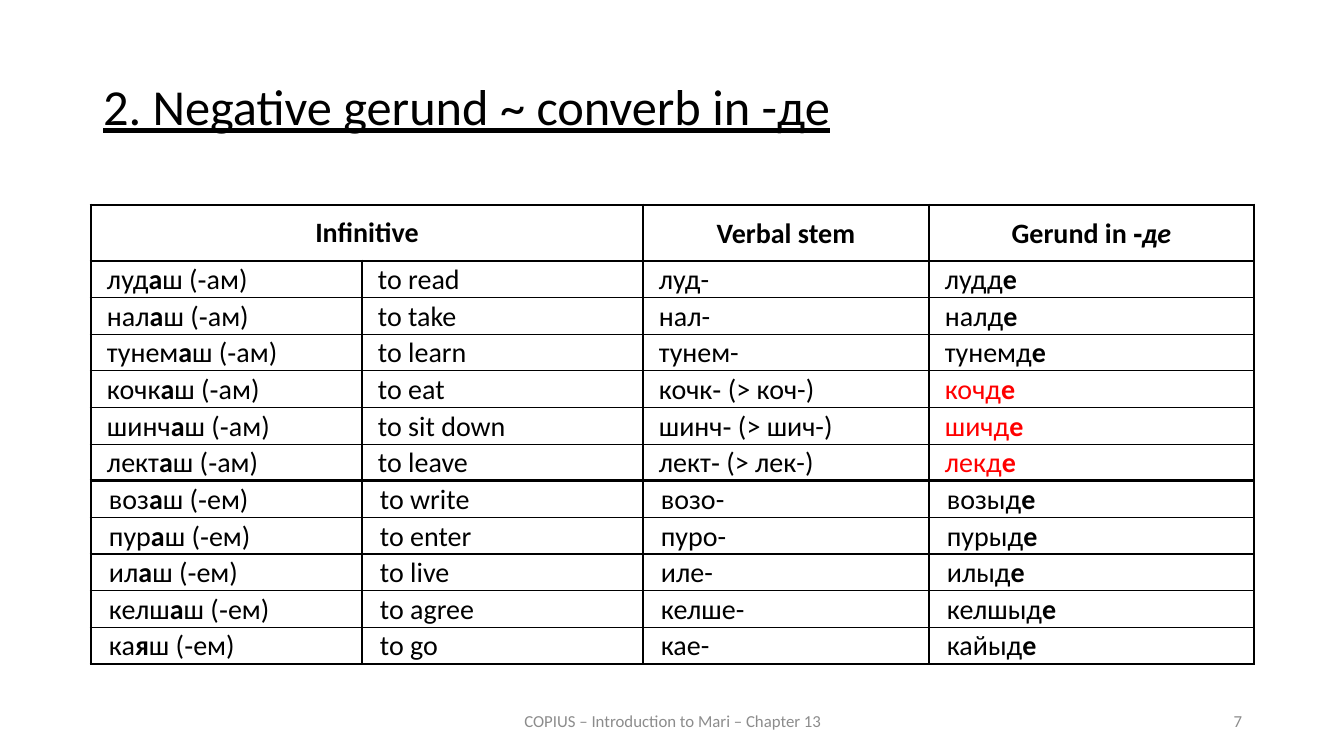
from lxml import etree
from pptx import Presentation
from pptx.dml.color import RGBColor
from pptx.enum.text import MSO_ANCHOR, PP_ALIGN
from pptx.oxml.ns import qn
from pptx.util import Pt

PX = 914400 / 100.8
BLACK = RGBColor(0x00, 0x00, 0x00)
RED = RGBColor(0xFF, 0x00, 0x00)
GREY = RGBColor(0x8C, 0x8C, 0x8C)
TOP, MIDDLE = MSO_ANCHOR.TOP, MSO_ANCHOR.MIDDLE
CENTER, RIGHT, JUSTIFY = PP_ALIGN.CENTER, PP_ALIGN.RIGHT, PP_ALIGN.JUSTIFY

BOLD = {"bold": True}
ITALIC = {"bold": True, "italic": True}
PLAIN = {"bold": False}

COLS = [271, 281, 286, 325]
HEAD, BODY = 56, 403
SIDES = [2.25, 1, 1.5, 1.5, 2.25]
THICK = (0, 1, 7, 12)

HEADS = {
    0: [("Infinitive", BOLD)],
    2: [("Verbal stem", BOLD)],
    3: [("Gerund in ‑", BOLD), ("де", ITALIC)],
}
AM = [
    ("луд", "а", "to read", "луд-", "лудд", BLACK),
    ("нал", "а", "to take", "нал-", "налд", BLACK),
    ("тунем", "а", "to learn", "тунем-", "тунемд", BLACK),
    ("кочк", "а", "to eat", "кочк‑ (> коч-)", "кочд", RED),
    ("шинч", "а", "to sit down", "шинч‑ (> шич-)", "шичд", RED),
    ("лект", "а", "to leave", "лект‑ (> лек-)", "лекд", RED),
]
EM = [
    ("воз", "а", "to write", "возо-", "возыд", BLACK),
    ("пур", "а", "to enter", "пуро-", "пурыд", BLACK),
    ("ил", "а", "to live", "иле-", "илыд", BLACK),
    ("келш", "а", "to agree", "келше-", "келшыд", BLACK),
    ("ка", "я", "to go", "кае-", "кайыд", BLACK),
]
GROUPS = [(AM, "ш (‑ам)", 16), (EM, "ш (‑ем)", 18)]


def px(n):
    return round(n * PX)


def assign(item, values):
    for name, value in values.items():
        setattr(item, name, value)


def write(frame, runs, size, color, align):
    para = frame.paragraphs[0]
    para.alignment = align
    for text, form in runs:
        run = para.add_run()
        run.text = text
        assign(run.font, {"name": "Calibri", "size": Pt(size), **form})
        run.font.color.rgb = color
    return para


def add_title(slide, text):
    title = slide.shapes.title
    assign(title, {"left": px(93), "top": px(77), "width": px(1159), "height": px(84)})
    assign(title.text_frame, {"vertical_anchor": TOP, "word_wrap": True})
    form = {"underline": True, "bold": False}
    para = write(title.text_frame, [(text, form)], 36, BLACK, JUSTIFY)
    assign(para, {"line_spacing": 0.9, "space_before": Pt(12)})


def add_note(slide, left, width, text, align):
    box = slide.shapes.add_textbox(px(left), px(701), px(width), px(40))
    assign(box.text_frame, {"vertical_anchor": MIDDLE, "word_wrap": True})
    write(box.text_frame, [(text, PLAIN)], 12, GREY, align)


def set_edges(cell, row, col):
    end = col + (cell.span_width if cell.is_merge_origin else 1)
    rules = [2.25 if edge in THICK else 1 for edge in (row, row + 1)]
    widths = {"a:lnL": SIDES[col], "a:lnR": SIDES[end], "a:lnT": rules[0], "a:lnB": rules[1]}
    props = cell._tc.get_or_add_tcPr()
    for tag, width in widths.items():
        line = etree.SubElement(props, qn(tag), w=str(Pt(width)))
        fill = etree.SubElement(line, qn("a:solidFill"))
        etree.SubElement(fill, qn("a:srgbClr"), val=str(BLACK))
    cell.fill.background()


def fill_cell(cell, runs, color, align, anchor, side, top=2, bottom=0):
    assign(cell, {
        "margin_left": px(side), "margin_right": px(side),
        "margin_top": px(top), "margin_bottom": px(bottom),
        "vertical_anchor": anchor,
    })
    write(cell.text_frame, runs, 20, color, align)


def add_verbs(slide):
    count = len(AM) + len(EM)
    frame = slide.shapes.add_table(
        count + 1, len(COLS), px(91), px(205), px(sum(COLS)), px(HEAD + BODY))
    table = frame.table
    assign(table, {"first_row": False, "horz_banding": False})
    for col, width in enumerate(COLS):
        table.columns[col].width = px(width)
    for row in range(count + 1):
        table.rows[row].height = px(BODY / count if row else HEAD)
    table.cell(0, 0).merge(table.cell(0, 1))

    for col, runs in HEADS.items():
        pads = (16, 2, 0) if col else (22, 11, 11)
        fill_cell(table.cell(0, col), runs, BLACK, CENTER, MIDDLE, *pads)
    row = 1
    for verbs, ending, side in GROUPS:
        for root, vowel, gloss, stem, gerund, color in verbs:
            texts = [
                [(root, PLAIN), (vowel, BOLD), (ending, PLAIN)],
                [(gloss, PLAIN)],
                [(stem, PLAIN)],
                [(gerund, PLAIN), ("е", BOLD)],
            ]
            for col, runs in enumerate(texts):
                tint = color if col == 3 else BLACK
                fill_cell(table.cell(row, col), runs, tint, JUSTIFY, TOP, side)
            row += 1
    for row in range(count + 1):
        for col in range(len(COLS)):
            set_edges(table.cell(row, col), row, col)


def main():
    deck = Presentation()
    assign(deck, {"slide_width": px(1344), "slide_height": px(756)})
    slide = deck.slides.add_slide(deck.slide_layouts[5])
    add_title(slide, "2. Negative gerund ~ converb in -де")
    add_note(slide, 446, 454, "COPIUS – Introduction to Mari – Chapter 13", CENTER)
    add_note(slide, 950, 302, "7", RIGHT)
    add_verbs(slide)
    deck.save("out.pptx")


if __name__ == "__main__":
    main()
